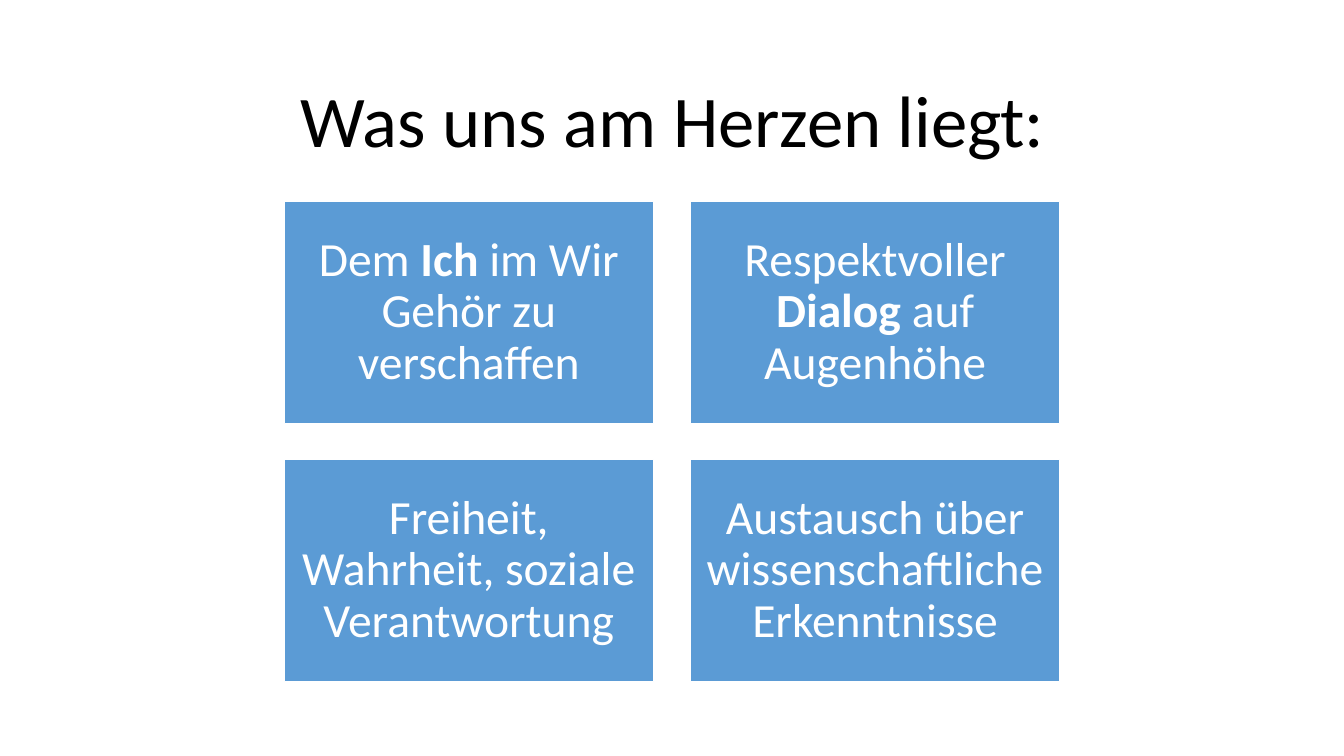
from pptx import Presentation
from pptx.dml.color import RGBColor
from pptx.enum import shapes, text
from pptx.util import Inches, Pt

COLORS = {"title": "000000", "tile": "5B9BD5", "white": "FFFFFF"}
FONT = "Calibri"
TILE_W, TILE_H, GAP = 3.66, 2.2, 0.37
LEFT, TOP, COLUMNS = 2.82, 2, 2
ROW_STEP = 2.56

# Each value is a list of (text, bold) runs.
VALUES = [
    [("Dem ", False), ("Ich", True), (" im Wir Gehör zu verschaffen", False)],
    [("Respektvoller ", False), ("Dialog", True), (" auf Augenhöhe", False)],
    [("Freiheit, Wahrheit, soziale Verantwortung", False)],
    [("Austausch über wissenschaftliche Erkenntnisse", False)],
]


def rgb(name):
    return RGBColor.from_string(COLORS[name])


def write(tf, runs, size, color, margin=None):
    """Fill a text frame with one centred paragraph of (text, bold) runs."""
    tf.word_wrap = True
    tf.auto_size = text.MSO_AUTO_SIZE.NONE
    tf.vertical_anchor = text.MSO_ANCHOR.MIDDLE
    if margin is not None:
        tf.margin_left = tf.margin_right = Inches(margin)
        tf.margin_top = tf.margin_bottom = Inches(margin)
    p = tf.paragraphs[0]
    p.alignment = text.PP_ALIGN.CENTER
    p.line_spacing = 0.9
    for words, bold in runs:
        r = p.add_run()
        r.text = words
        r.font.name = FONT
        r.font.size = Pt(size)
        r.font.bold = bold
        r.font.color.rgb = rgb(color)


def add_title(s, words):
    title = s.shapes.title
    title.left, title.top = Inches(0.92), Inches(0.61)
    title.width, title.height = Inches(11.5), Inches(1.24)
    write(title.text_frame, [(words, False)], size=52, color="title")


def add_tile(s, left, top, runs):
    sp = s.shapes.add_shape(shapes.MSO_SHAPE.RECTANGLE, Inches(left), Inches(top),
                            Inches(TILE_W), Inches(TILE_H))
    sp.shadow.inherit = False
    sp.fill.solid()
    sp.fill.fore_color.rgb = rgb("tile")
    sp.line.color.rgb = rgb("white")
    sp.line.width = Pt(1)
    write(sp.text_frame, runs, size=34, color="white", margin=0.14)


def main():
    prs = Presentation()
    prs.slide_width, prs.slide_height = Inches(13.33), Inches(7.5)
    s = prs.slides.add_slide(prs.slide_layouts[5])
    add_title(s, "Was uns am Herzen liegt:")
    for i, runs in enumerate(VALUES):
        row, column = divmod(i, COLUMNS)
        add_tile(s, LEFT + column * (TILE_W + GAP), TOP + row * ROW_STEP, runs)
    prs.save("out.pptx")


if __name__ == "__main__":
    main()
